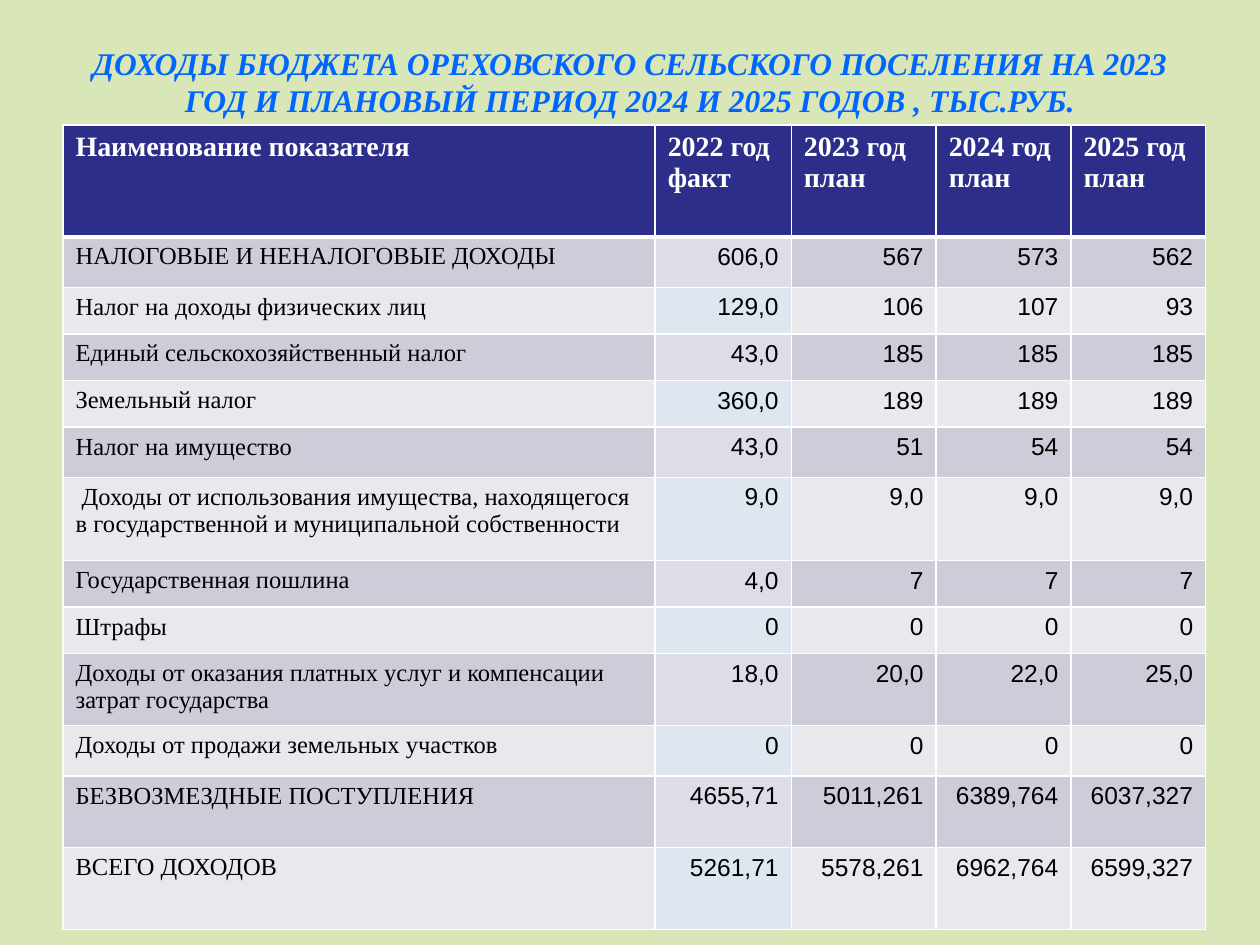
from lxml.etree import SubElement
from pptx import Presentation
from pptx.dml.color import RGBColor
from pptx.enum.text import MSO_ANCHOR, PP_ALIGN
from pptx.oxml.ns import qn
from pptx.util import Inches, Pt

TITLE = (
    "ДОХОДЫ БЮДЖЕТА ОРЕХОВСКОГО СЕЛЬСКОГО ПОСЕЛЕНИЯ НА 2023 ГОД "
    "И ПЛАНОВЫЙ ПЕРИОД 2024 И 2025 ГОДОВ , ТЫС.РУБ."
)
HEADER = (
    "Наименование показателя",
    "2022 год\nфакт",
    "2023 год\nплан",
    "2024 год\nплан",
    "2025 год план",
)
INCOME = [
    ("НАЛОГОВЫЕ И НЕНАЛОГОВЫЕ ДОХОДЫ", "606,0", "567", "573", "562"),
    ("Налог на доходы физических лиц", "129,0", "106", "107", "93"),
    ("Единый сельскохозяйственный налог", "43,0", "185", "185", "185"),
    ("Земельный налог", "360,0", "189", "189", "189"),
    ("Налог на имущество", "43,0", "51", "54", "54"),
    (
        " Доходы от использования имущества, находящегося "
        "в государственной и муниципальной собственности",
        "9,0", "9,0", "9,0", "9,0",
    ),
    ("Государственная пошлина", "4,0", "7", "7", "7"),
    ("Штрафы", "0", "0", "0", "0"),
    (
        "Доходы от оказания платных услуг и компенсации затрат государства",
        "18,0", "20,0", "22,0", "25,0",
    ),
    ("Доходы от продажи земельных участков", "0", "0", "0", "0"),
    ("БЕЗВОЗМЕЗДНЫЕ ПОСТУПЛЕНИЯ", "4655,71", "5011,261", "6389,764", "6037,327"),
    ("ВСЕГО ДОХОДОВ", "5261,71", "5578,261", "6962,764", "6599,327"),
]
COLUMN_WIDTHS = (4.7, 1.08, 1.15, 1.07, 1.07)
ROW_HEIGHTS = (0.89, 0.4, 0.37, 0.37, 0.37, 0.4, 0.66, 0.37, 0.37, 0.57, 0.4, 0.57, 0.65)
HEADER_FILL = "2D2D8A"
BAND_FILLS = ("CDCDDA", "E8E8ED")
FACT_FILLS = ("DEDCE6", "DEE6EF")
FACT_COLUMN = 1
SERIF, SANS = "Times New Roman", "Arial"
THIN, THICK = 0.96, 3


def color(value):
    return RGBColor.from_string(value)


def write_text(frame, text, size=14, font=SERIF, fill="000000", bold=False,
               italic=False, align=PP_ALIGN.LEFT):
    frame.word_wrap = True
    for index, line in enumerate(text.split("\n")):
        paragraph = frame.add_paragraph() if index else frame.paragraphs[0]
        paragraph.alignment = align
        run = paragraph.add_run()
        run.text = line
        run.font.size = Pt(size)
        run.font.name = font
        run.font.bold = bold
        run.font.italic = italic
        run.font.color.rgb = color(fill)


def set_borders(cell, **widths):
    properties = cell._tc.get_or_add_tcPr()
    for side in "LRTB":
        line = SubElement(properties, qn(f"a:ln{side}"), w=str(Pt(widths.get(side, THIN))))
        solid = SubElement(line, qn("a:solidFill"))
        SubElement(solid, qn("a:srgbClr"), val="FFFFFF")


def fill_cell(cell, value):
    cell.fill.solid()
    cell.fill.fore_color.rgb = color(value)


def add_title(slide):
    box = slide.shapes.add_textbox(Inches(0.5), Inches(0.3), Inches(9), Inches(0.69))
    box.text_frame.vertical_anchor = MSO_ANCHOR.MIDDLE
    write_text(box.text_frame, TITLE, size=18, fill="0066FF", bold=True,
               italic=True, align=PP_ALIGN.CENTER)


def add_income_table(slide):
    rows = [HEADER, *INCOME]
    table = slide.shapes.add_table(
        len(rows), len(HEADER), Inches(0.5), Inches(0.99),
        Inches(sum(COLUMN_WIDTHS)), Inches(sum(ROW_HEIGHTS)),
    ).table
    for column, width in zip(table.columns, COLUMN_WIDTHS):
        column.width = Inches(width)
    for row, height in zip(table.rows, ROW_HEIGHTS):
        row.height = Inches(height)

    for row_index, row in enumerate(rows):
        for column_index, text in enumerate(row):
            cell = table.cell(row_index, column_index)
            if row_index == 0:
                set_borders(cell, B=THICK)
                fill_cell(cell, HEADER_FILL)
                write_text(cell.text_frame, text, size=16, fill="FFFFFF", bold=True)
                continue
            set_borders(cell, T=THICK if row_index == 1 else THIN)
            fills = FACT_FILLS if column_index == FACT_COLUMN else BAND_FILLS
            fill_cell(cell, fills[(row_index - 1) % 2])
            if column_index == 0:
                write_text(cell.text_frame, text)
            else:
                write_text(cell.text_frame, text, font=SANS, align=PP_ALIGN.RIGHT)


def main():
    presentation = Presentation()
    presentation.slide_width = Inches(10)
    presentation.slide_height = Inches(7.5)
    slide = presentation.slides.add_slide(presentation.slide_layouts[6])
    slide.background.fill.solid()
    slide.background.fill.fore_color.rgb = color("D9E6B8")
    add_title(slide)
    add_income_table(slide)
    presentation.save("out.pptx")


if __name__ == "__main__":
    main()
